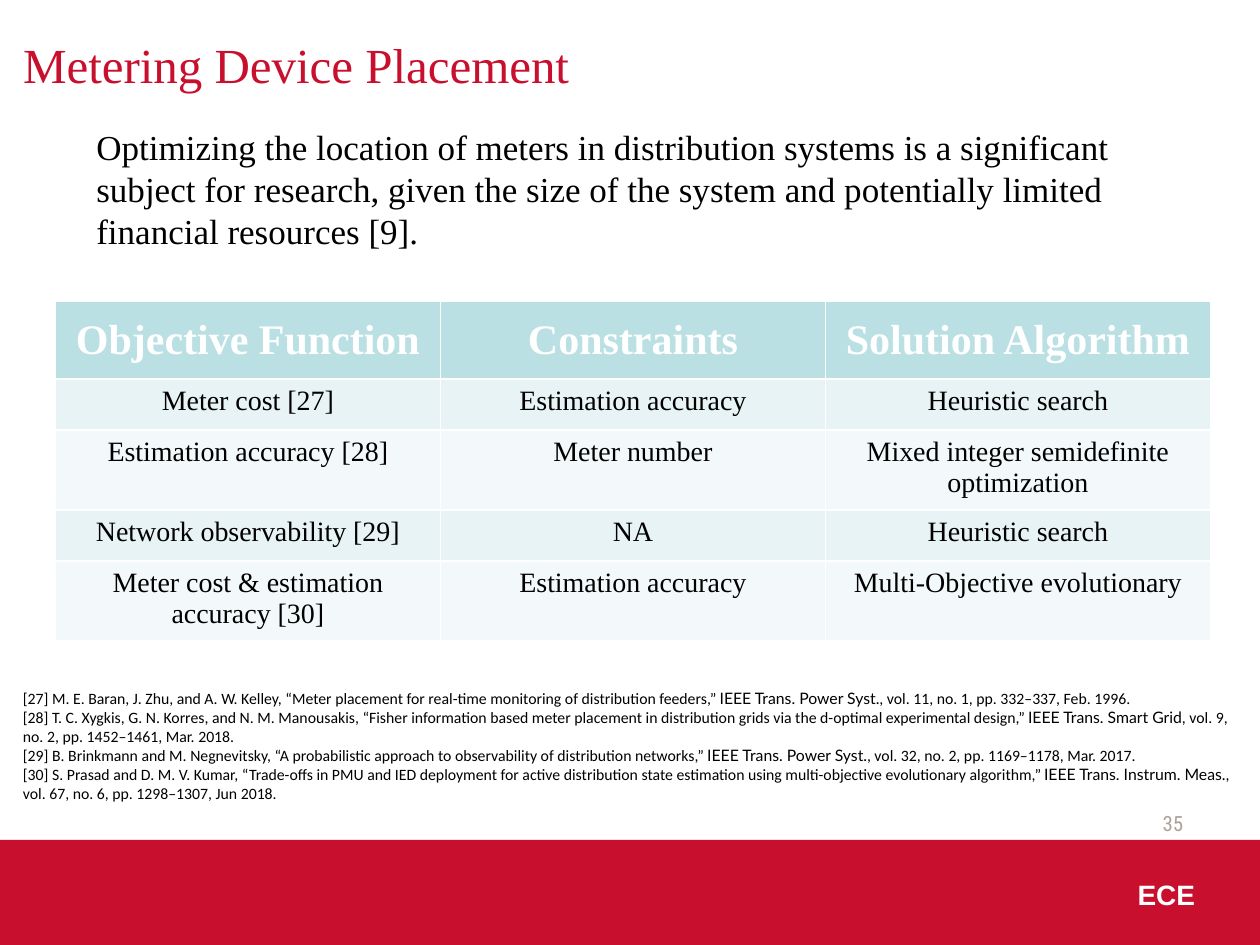
from pptx import Presentation
from pptx.dml.color import RGBColor
from pptx.enum.shapes import MSO_SHAPE
from pptx.enum.text import MSO_ANCHOR, PP_ALIGN
from pptx.util import Pt

RED = RGBColor(0xC8, 0x10, 0x2E)
WHITE = RGBColor(0xFF, 0xFF, 0xFF)
BLACK = RGBColor(0, 0, 0)
GREY = RGBColor(0xAC, 0xA3, 0x9A)
TEAL = RGBColor(0xBB, 0xE0, 0xE3)
BANDS = (RGBColor(0xE7, 0xF3, 0xF4), RGBColor(0xF3, 0xF9, 0xFA))

LEFT, CENTER, RIGHT = PP_ALIGN.LEFT, PP_ALIGN.CENTER, PP_ALIGN.RIGHT
TOP, MIDDLE = MSO_ANCHOR.TOP, MSO_ANCHOR.MIDDLE
SERIF = "Times New Roman"

ROWS = [
    ("Objective Function", "Constraints", "Solution Algorithm"),
    ("Meter cost [27]", "Estimation accuracy", "Heuristic search"),
    ("Estimation accuracy [28]", "Meter number",
     "Mixed integer semidefinite optimization"),
    ("Network observability [29]", "NA", "Heuristic search"),
    ("Meter cost & estimation accuracy [30]", "Estimation accuracy",
     "Multi-Objective evolutionary"),
]

# Each reference: authors and title, journal, issue
REFS = [
    ("[27] M. E. Baran, J. Zhu, and A. W. Kelley, “Meter placement for "
     "real-time monitoring of distribution feeders,” ",
     "IEEE Trans. Power Syst.", ", vol. 11, no. 1, pp. 332–337, Feb. 1996."),
    ("[28] T. C. Xygkis, G. N. Korres, and N. M. Manousakis, “Fisher "
     "information based meter placement in distribution grids via the "
     "d-optimal experimental design,” ",
     "IEEE Trans. Smart Grid", ", vol. 9, no. 2, pp. 1452–1461, Mar. 2018."),
    ("[29] B. Brinkmann and M. Negnevitsky, “A probabilistic approach to "
     "observability of distribution networks,” ",
     "IEEE Trans. Power Syst.", ", vol. 32, no. 2, pp. 1169–1178, Mar. 2017."),
    ("[30] S. Prasad and D. M. V. Kumar, “Trade-offs in PMU and IED "
     "deployment for active distribution state estimation using "
     "multi-objective evolutionary algorithm,” ",
     "IEEE Trans. Instrum. Meas.", ", vol. 67, no. 6, pp. 1298–1307, Jun 2018."),
]


class Deck:
    def __init__(self):
        self.prs = Presentation()
        self.prs.slide_width, self.prs.slide_height = Pt(720), Pt(540)
        self.slide = self.prs.slides.add_slide(self.prs.slide_layouts[5])
        self.shapes = self.slide.shapes

    def style(self, para, size, color, name=SERIF, align=LEFT, bold=False):
        para.alignment = align
        font = para.font
        font.size, font.name, font.bold = Pt(size), name, bold
        font.color.rgb = color

    def title(self, text, x, y, w, h):
        box = self.shapes.title
        box.left, box.top, box.width, box.height = Pt(x), Pt(y), Pt(w), Pt(h)
        box.text_frame.text = text
        box.text_frame.vertical_anchor = MIDDLE
        self.style(box.text_frame.paragraphs[0], 28, RED)

    def band(self, x, y, w, h):
        bar = self.shapes.add_shape(MSO_SHAPE.RECTANGLE, Pt(x), Pt(y), Pt(w), Pt(h))
        bar.shadow.inherit = False
        bar.fill.solid()
        bar.fill.fore_color.rgb = RED
        bar.line.fill.background()

    def frame(self, x, y, w, h, anchor=TOP):
        """Add an empty wrapping text box and return its text frame."""
        frame = self.shapes.add_textbox(Pt(x), Pt(y), Pt(w), Pt(h)).text_frame
        frame.word_wrap = True
        frame.vertical_anchor = anchor
        return frame

    def text(self, text, x, y, w, h, size, color, anchor=TOP, **look):
        para = self.frame(x, y, w, h, anchor).paragraphs[0]
        para.text = text
        self.style(para, size, color, **look)

    def refs(self, items, x, y, w, h):
        frame = self.frame(x, y, w, h)
        for i, parts in enumerate(items):
            para = frame.add_paragraph() if i else frame.paragraphs[0]
            self.style(para, 9, BLACK, "Calibri")
            for part in parts:
                para.add_run().text = part
            para.runs[1].font.name = "Lato"

    def table(self, rows, x, y, w, h, head, line):
        """Rows start at the given heights and grow with their text."""
        holder = self.shapes.add_table(
            len(rows), len(rows[0]), Pt(x), Pt(y), Pt(w), Pt(h))
        grid = holder.table
        for r, row in enumerate(rows):
            grid.rows[r].height = Pt(line if r else head)
            for c, text in enumerate(row):
                cell = grid.cell(r, c)
                cell.text = text
                cell.fill.solid()
                cell.fill.fore_color.rgb = BANDS[(r - 1) % 2] if r else TEAL
                cell.vertical_anchor = TOP if r else MIDDLE
                size, color = (16, BLACK) if r else (24, WHITE)
                self.style(cell.text_frame.paragraphs[0], size, color,
                           align=CENTER, bold=not r)
        holder.height = Pt(h)


def main():
    deck = Deck()
    deck.band(0, 480, 720, 60)
    deck.title("Metering Device Placement", 6, 11.5, 612, 50.4)
    deck.text("35", 515.5, 455.8, 167.8, 28.8, 12, GREY, MIDDLE,
              name="Roboto Condensed", align=RIGHT)
    deck.text("ECE", 498, 498, 192, 30, 16, WHITE,
              name="Arial", align=RIGHT, bold=True)
    deck.text("Optimizing the location of meters in distribution systems is a "
              "significant subject for research, given the size of the system "
              "and potentially limited financial resources [9].",
              48, 68.4, 618, 80, 20, BLACK)
    deck.table(ROWS, 31.7, 172, 660, 194.4, head=44.6, line=29.2)
    deck.refs(REFS, 6, 390.2, 711.4, 72.7)
    deck.prs.save("out.pptx")


if __name__ == "__main__":
    main()
